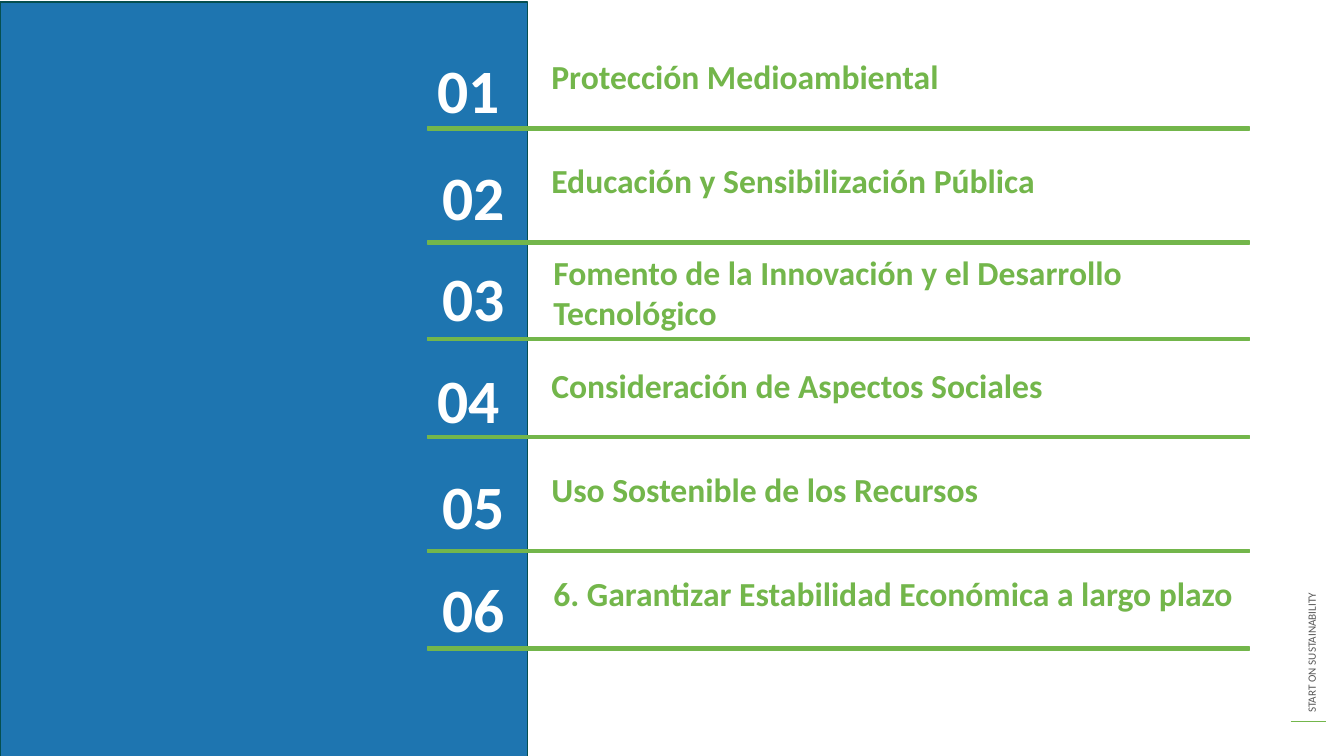
from dataclasses import dataclass

from pptx import Presentation
from pptx.dml.color import RGBColor
from pptx.enum.shapes import MSO_CONNECTOR, MSO_SHAPE
from pptx.enum.text import MSO_ANCHOR, PP_ALIGN
from pptx.oxml.ns import qn
from pptx.util import Pt
from lxml import etree

RECT = MSO_SHAPE.RECTANGLE
STRAIGHT = MSO_CONNECTOR.STRAIGHT
TOP = MSO_ANCHOR.TOP
LEFT = PP_ALIGN.LEFT
SCALE = 9144  # EMU per px, 100 px to the inch


@dataclass(frozen=True)
class Theme:
    font: str = "Calibri"
    blue: str = "1E75B0"
    edge: str = "054F50"
    green: str = "73B64B"
    gray: str = "595959"
    white: str = "FFFFFF"
    small: int = 8
    title: int = 24
    number: int = 44


def px(*values):
    return [value * SCALE for value in values]


def rgb(code):
    return RGBColor.from_string(code)


class Deck:
    def __init__(self, theme):
        self.theme = theme
        self.show = Presentation()
        self.show.slide_width, self.show.slide_height = px(1333, 750)
        self.slide = self.show.slides.add_slide(self.show.slide_layouts[6])

    def text(self, words, box, size, color, bold=False, spacing=None, turn=0):
        label = self.slide.shapes.add_textbox(*px(*box))
        label.rotation = turn
        frame = label.text_frame
        frame.word_wrap = True
        frame.vertical_anchor = TOP
        para = frame.paragraphs[0]
        para.alignment = LEFT
        if spacing:
            para.line_spacing = spacing
        run = para.add_run()
        run.text = words
        run.font.name = self.theme.font
        run.font.size = Pt(size)
        run.font.bold = bold
        run.font.color.rgb = rgb(color)

    def rect(self, box, fill, edge):
        shape = self.slide.shapes.add_shape(RECT, *px(*box))
        shape.shadow.inherit = False
        shape.fill.solid()
        shape.fill.fore_color.rgb = rgb(fill)
        shape.line.color.rgb = rgb(edge)
        shape.line.width = Pt(1)

    def line(self, ends, color):
        link = self.slide.shapes.add_connector(STRAIGHT, *px(*ends))
        link.line.color.rgb = rgb(color)
        link.line.width = Pt(1)
        etree.SubElement(link._element.spPr, qn("a:effectLst"))

    def row(self, number, title, num_at, title_at, rule_y):
        """Draw one agenda entry: its title, number and underline."""
        look = self.theme
        self.text(title, (*title_at, 718, 37), look.title, look.green, bold=True)
        self.text(f"{number:02}", (*num_at, 135, 105), look.number, look.white,
                  bold=True, spacing=1.3)
        self.rect((424, rule_y, 815, 3), look.green, look.green)


# title, number corner, title corner, underline top
ROWS = [
    ("Protección Medioambiental", (424, 25), (537, 51), 126),
    ("Educación y Sensibilización Pública", (429, 131), (537, 154), 239),
    ("Fomento de la Innovación y el Desarrollo Tecnológico",
     (429, 231), (539, 245), 335),
    ("Consideración de Aspectos Sociales", (424, 332), (537, 357), 432),
    ("Uso Sostenible de los Recursos", (429, 437), (537, 460), 545),
    ("6. Garantizar Estabilidad Económica a largo plazo",
     (429, 539), (539, 563), 642),
]


def main():
    look = Theme()
    deck = Deck(look)
    deck.text("START ON SUSTAINABILITY", (1078, 482, 446, 24),
              look.small, look.gray, turn=270)
    deck.line((1280, 716, 1315, 716), look.green)
    deck.rect((0, 2, 523, 750), look.blue, look.edge)
    for number, entry in enumerate(ROWS, 1):
        deck.row(number, *entry)
    deck.show.save("out.pptx")


if __name__ == "__main__":
    main()
